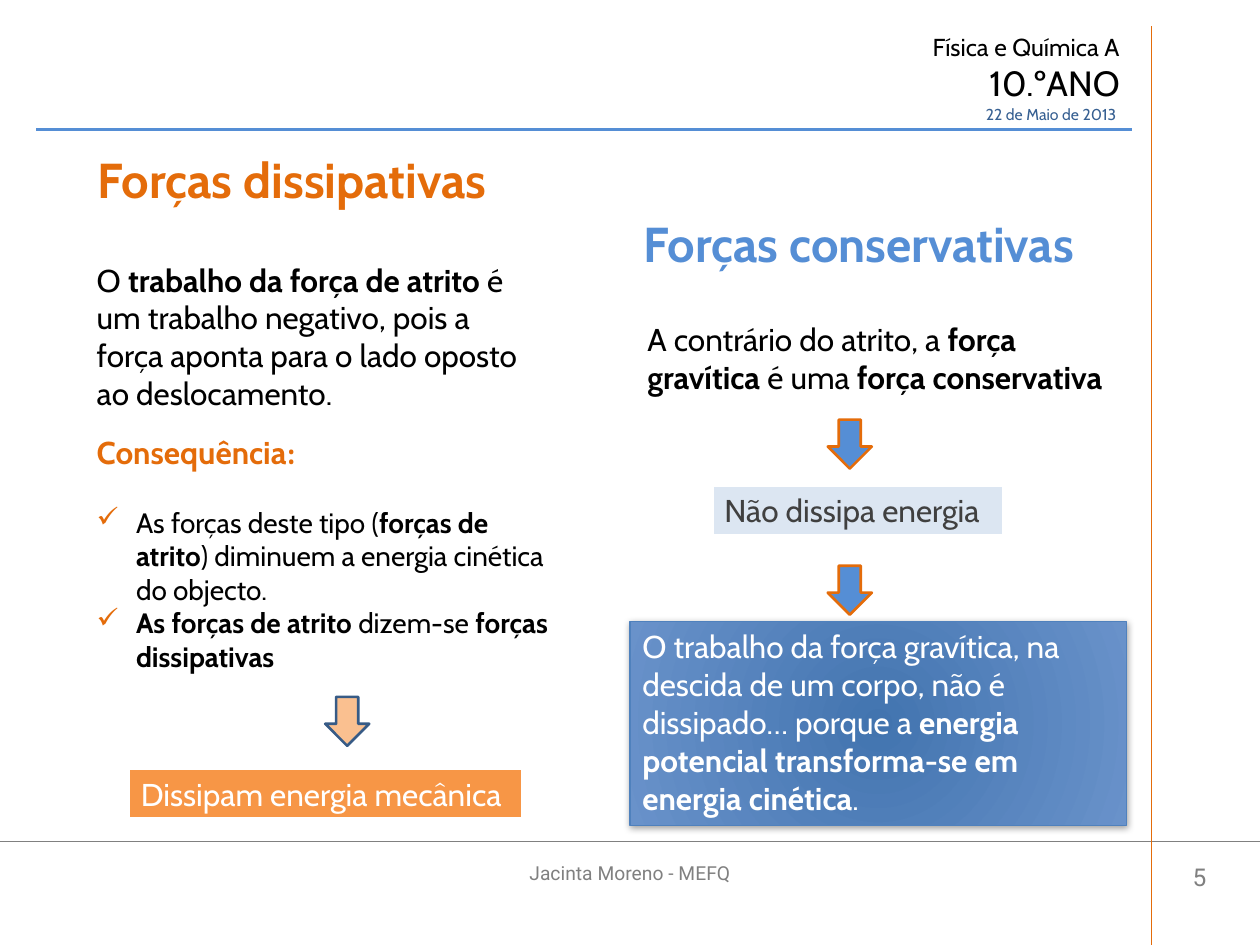
from lxml import etree
from pptx import Presentation
from pptx.dml.color import RGBColor
from pptx.enum.shapes import MSO_CONNECTOR, MSO_SHAPE
from pptx.enum.text import MSO_ANCHOR, PP_ALIGN
from pptx.oxml import parse_xml
from pptx.oxml.ns import nsdecls, qn
from pptx.util import Pt

ORANGE, BLUE, GREY = "E46C0A", "558ED5", "808080"


def rgb(value):
    return RGBColor.from_string(value)


def box_at(x, y, w, h):
    return Pt(x), Pt(y), Pt(w), Pt(h)


def xml(tag, body, attrs=""):
    return parse_xml(f'<a:{tag} {nsdecls("a")} {attrs}>{body}</a:{tag}>')


def add_run(p, text, size, color="000000", bold=False, name="Cabin"):
    r = p.add_run()
    r.text = text
    for key, value in {"size": Pt(size), "bold": bold, "name": name}.items():
        setattr(r.font, key, value)
    r.font.color.rgb = rgb(color)


def write(p, text, size, color="000000", name="Cabin", align=PP_ALIGN.LEFT):
    """Fill a paragraph; words between asterisks are bold."""
    p.alignment = align
    for i, part in enumerate(text.split("*")):
        if part:
            add_run(p, part, size, color, i % 2 == 1, name)


def add_text(s, box, text, size, color="000000", anchor=MSO_ANCHOR.TOP, **fmt):
    tf = s.shapes.add_textbox(*box_at(*box)).text_frame
    tf.word_wrap = True
    tf.vertical_anchor = anchor
    write(tf.paragraphs[0], text, size, color, **fmt)
    return tf


def add_box(s, kind, box, fill, line, width):
    sp = s.shapes.add_shape(kind, *box_at(*box))
    sp.shadow.inherit = False
    sp.fill.solid()
    sp.fill.fore_color.rgb = rgb(fill)
    sp.line.color.rgb = rgb(line)
    sp.line.width = Pt(width)
    return sp


def add_arrow(s, x, y, fill, line):
    add_box(s, MSO_SHAPE.DOWN_ARROW, (x, y, 25.2, 28), fill, line, 1.5)


def add_label(s, box, text, fill, color):
    tf = add_box(s, MSO_SHAPE.RECTANGLE, box, fill, "FFFFFF", 2).text_frame
    tf.word_wrap = False
    tf.vertical_anchor = MSO_ANCHOR.TOP
    write(tf.paragraphs[0], text, 18, color)


def add_rule(s, x1, y1, x2, y2, color, width):
    ln = s.shapes.add_connector(MSO_CONNECTOR.STRAIGHT, Pt(x1), Pt(y1), Pt(x2), Pt(y2))
    ln.line.color.rgb = rgb(color)
    ln.line.width = Pt(width)
    etree.SubElement(ln._element.spPr, qn("a:effectLst"))


def add_check(p, first=False):
    """Give a paragraph a hanging check mark."""
    pPr = p._p.get_or_add_pPr()
    pPr.set("marL", str(Pt(22.5)))
    pPr.set("indent", str(-Pt(22.5)))
    if first:
        p.space_before = Pt(19.5)
    pPr.append(xml("buClr", f'<a:srgbClr val="{ORANGE}"/>'))
    pPr.append(xml("buChar", "", 'char="✓"'))


def header(s, x, y, w, h):
    tbl = s.shapes.add_table(1, 1, *box_at(x, y, w, h)).table
    tbl.first_row = tbl.horz_banding = False
    cell = tbl.cell(0, 0)
    tf = cell.text_frame
    lines = [("Física e Química A", 14, "000000"), ("10.ºANO", 20, "000000"),
             ("22 de Maio de 2013 ", 9, "376092")]
    for i, (text, size, color) in enumerate(lines):
        p = tf.add_paragraph() if i else tf.paragraphs[0]
        write(p, text, size, color, align=PP_ALIGN.RIGHT)
    cell.fill.background()
    # Bottom border goes before the fill
    cell._tc.get_or_add_tcPr().insert(0, xml(
        "lnB", f'<a:solidFill><a:srgbClr val="{BLUE}"/></a:solidFill>', f'w="{Pt(2.25)}"'))


def footer(s, x, y, w, h):
    add_rule(s, x, y, x + w, y, GREY, 0.75)
    add_rule(s, x + 658, 15, x + 658, y + h, ORANGE, 1)
    fmt = {"anchor": MSO_ANCHOR.MIDDLE, "name": "Roboto", "align": PP_ALIGN.CENTER}
    add_text(s, (x + 246, y + 3, 228, 29), "Jacinta Moreno - MEFQ", 11, GREY, **fmt)
    add_text(s, (x + 666, y + 4, 39, 32), "5", 14, GREY, **fmt)


def dissipative(s, x, y, w):
    # Title
    title = s.shapes.title
    title.left, title.top, title.width, title.height = box_at(x, y, w, 51)
    tf = title.text_frame
    tf.vertical_anchor = MSO_ANCHOR.MIDDLE
    write(tf.paragraphs[0], "*Forças dissipativas *", 28, ORANGE, align=PP_ALIGN.CENTER)
    # Explanation
    left = x + 28.2
    add_text(s, (left, y + 68.4, 260.6, 94.3),
             "O *trabalho da força de atrito *é um trabalho negativo, pois a força "
             "aponta para o lado oposto ao deslocamento.", 18)
    # Consequence and check list
    tf = add_text(s, (left, y + 167, 278.6, 186.5), "*Consequência*", 18, ORANGE)
    add_run(tf.paragraphs[0], ":", 18, ORANGE, True, "Cambria")
    points = ["As forças deste tipo (*forças de atrito*) diminuem a energia cinética do objecto.",
              "*As forças de atrito *dizem-se *forças dissipativas*"]
    for i, text in enumerate(points):
        p = tf.add_paragraph()
        add_check(p, first=i == 0)
        write(p, text, 16)
    # Conclusion
    add_arrow(s, x + 165.8, y + 321.2, "FAC090", "375B86")
    add_label(s, (x + 53.4, y + 362.2, 225.4, 28.8),
              "Dissipam energia mecânica", "F79646", "FFFFFF")


def conservative(s, x, y, w):
    # Heading, raised within its box
    tf = add_text(s, (x, y, w, 77.8), "*Forças conservativas*", 28, BLUE,
                  MSO_ANCHOR.MIDDLE, align=PP_ALIGN.CENTER)
    tf.margin_bottom = Pt(32.5)
    add_text(s, (x + 25.2, y + 64.8, 277.9, 51.1),
             "A contrário do atrito, a *força gravítica* é uma *força conservativa*", 18)
    # Chain of arrows and boxes
    for dy in (125.3, 208.8):
        add_arrow(s, x + 135.3, y + dy, BLUE, ORANGE)
    add_label(s, (x + 69.1, y + 162.7, 167, 28.8), "Não dissipa energia", "DCE6F2", "404040")
    # Conclusion with radial gradient and soft shadow
    sp = add_box(s, MSO_SHAPE.RECTANGLE, (x + 22.3, y + 240.5, 283.7, 116.6),
                 "4274AF", "4F81BD", 0.75)
    spPr = sp._element.spPr
    stops = "".join(f'<a:gs pos="{pos}"><a:srgbClr val="{color}"/></a:gs>'
                    for pos, color in ((0, "4274AF"), (100000, "6992CA")))
    spPr.replace(spPr.find(qn("a:solidFill")), xml(
        "gradFill", f'<a:gsLst>{stops}</a:gsLst><a:path path="circle">'
        '<a:fillToRect l="40000" t="100000" r="40000" b="100000"/></a:path>'))
    spPr.replace(spPr.find(qn("a:effectLst")), xml(
        "effectLst", f'<a:outerShdw blurRad="{Pt(4)}" dist="{Pt(1)}" dir="5400000" rotWithShape="0">'
        '<a:srgbClr val="000000"><a:alpha val="37000"/></a:srgbClr></a:outerShdw>'))
    tf = sp.text_frame
    tf.word_wrap = True
    tf.vertical_anchor = MSO_ANCHOR.TOP
    write(tf.paragraphs[0], "O trabalho da força gravítica, na descida de um corpo, não é "
          "dissipado… porque a *energia potencial transforma-se em energia cinética*.",
          18, "FFFFFF")


def main():
    prs = Presentation()
    prs.slide_width, prs.slide_height = Pt(720), Pt(540)
    s = prs.slides.add_slide(prs.slide_layouts[5])
    footer(s, 0, 481, 720, 59)
    header(s, 20, 15, 627, 59)
    dissipative(s, 20, 77, 300)
    conservative(s, 337.7, 114.5, 306)
    prs.save("out.pptx")


if __name__ == "__main__":
    main()
